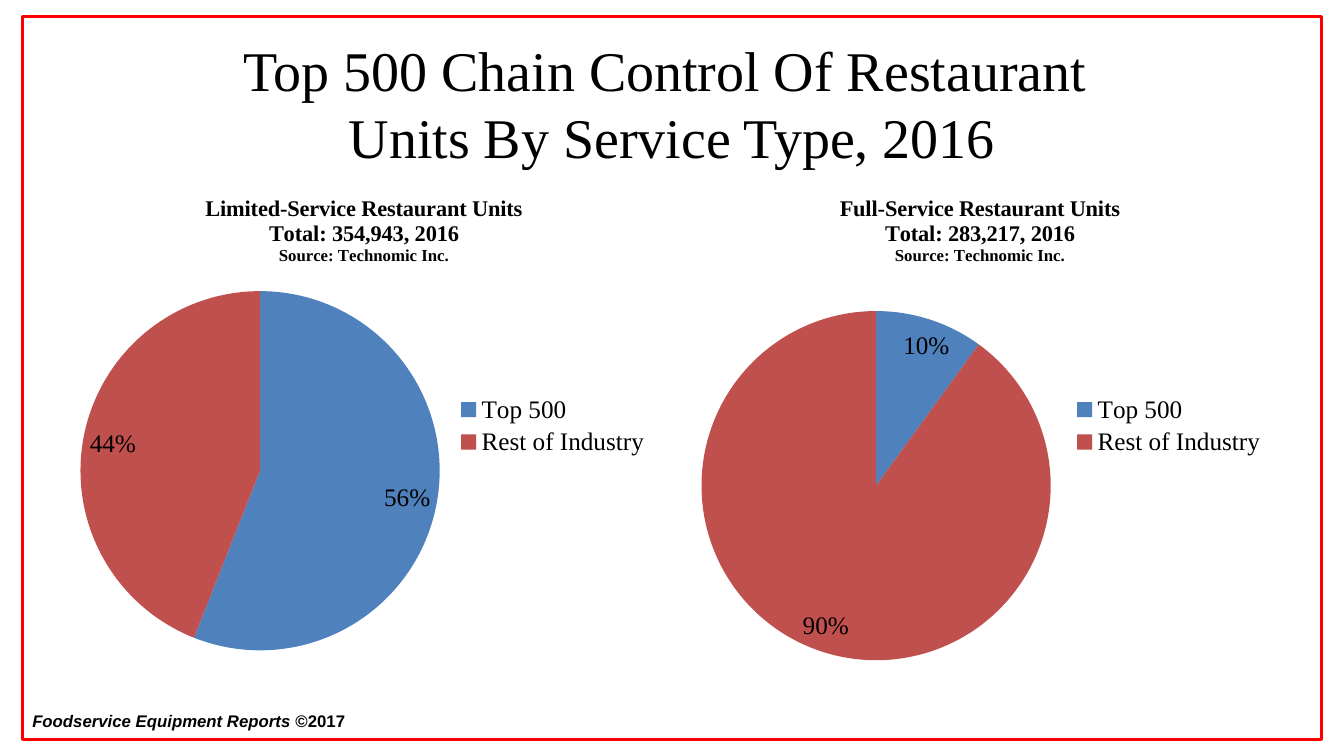
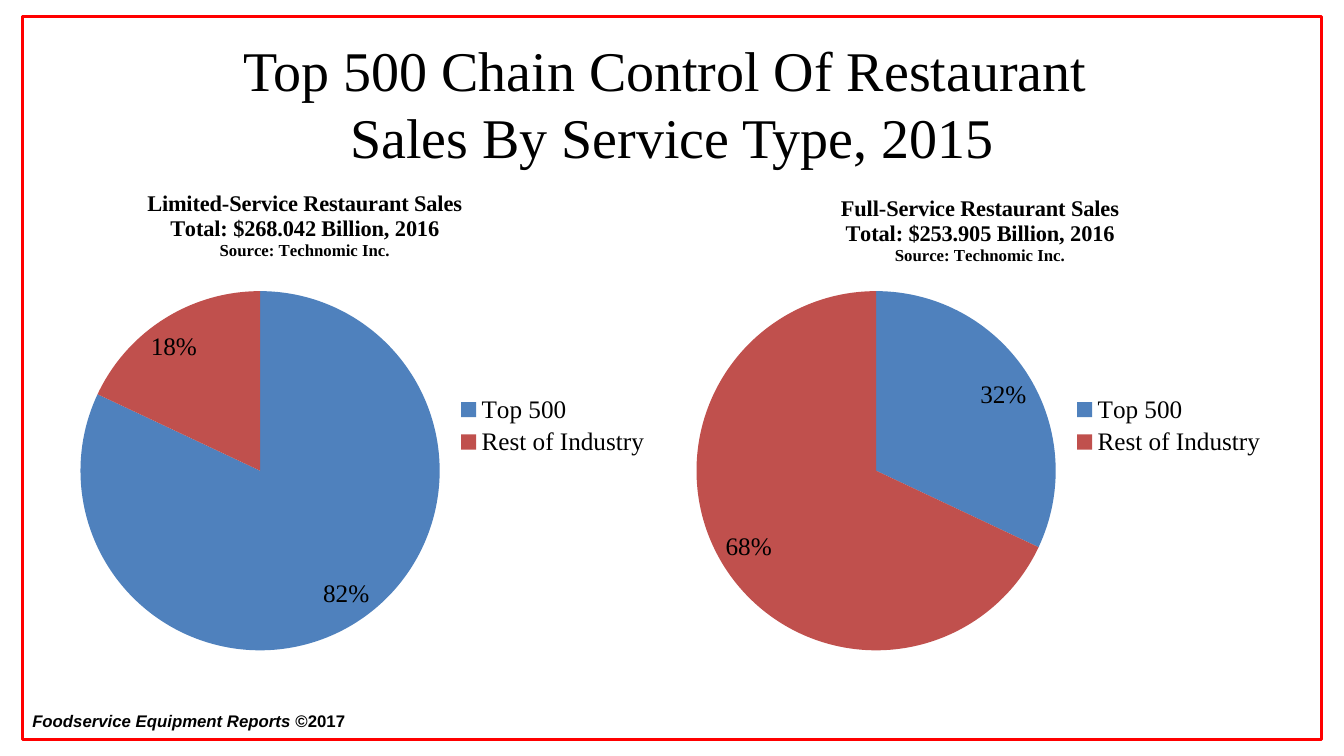
"""Two slides of paired pie charts on Top 500 chain control of restaurants."""
from lxml import etree
from pptx import Presentation
from pptx.chart.data import CategoryChartData
from pptx.dml.color import RGBColor
from pptx.enum import chart as ch, shapes, text
from pptx.oxml.ns import qn
from pptx.util import Pt

BLACK = RGBColor(0x00, 0x00, 0x00)
RED = RGBColor(0xFF, 0x00, 0x00)
SLICES = [RGBColor(0x4F, 0x81, 0xBD), RGBColor(0xC0, 0x50, 0x4D)]
SERIF, SANS = "Times New Roman", "Arial"

CATEGORIES = ["Top 500", "Rest of Industry"]
SOURCE = "Source: Technomic Inc."
FOOTER = [("Foodservice Equipment Reports ", True), ("©2017", False)]
WIDE_PIE = {"x": 0.02, "y": 0.23, "w": 0.61, "h": 0.72}
SMALL_PIE = {"x": 0.03, "y": 0.27, "w": 0.59, "h": 0.7}
SLIDES = [
    (["Top 500 Chain Control Of Restaurant ", "Units By Service Type, 2016"], [
        ("Limited-Service Restaurant Units", "Total: 354,943, 2016",
         (56, 44), WIDE_PIE, None),
        ("Full-Service Restaurant Units", "Total: 283,217, 2016",
         (10, 90), SMALL_PIE, None),
    ]),
    (["Top 500 Chain Control Of Restaurant ", "Sales By Service Type, 2015"], [
        ("Limited-Service Restaurant Sales", "Total: $268.042 Billion, 2016",
         (82, 18), WIDE_PIE, {"x": 0.13, "y": 0.02}),
        ("Full-Service Restaurant Sales", "Total: $253.905 Billion, 2016",
         (32, 68), WIDE_PIE, None),
    ]),
]

SLIDE_W, SLIDE_H = 960, 540
MARGIN, GAP = 48, 16
CHART_TOP, CHART_H = 126, 356.4
CHART_W = (SLIDE_W - 2 * MARGIN - GAP) / 2


def style(font, size, name=SERIF, bold=False, italic=False):
    font.name, font.size, font.bold, font.italic = name, Pt(size), bold, italic
    font.color.rgb = BLACK


def add_run(p, words, size, **options):
    r = p.add_run()
    r.text = words
    style(r.font, size, **options)


def add_shared_parts(s, layout):
    footer = s.shapes.add_textbox(Pt(16), Pt(504), Pt(512), Pt(21.6))
    tf = footer.text_frame
    tf.word_wrap = True
    for words, italic in FOOTER:
        add_run(tf.paragraphs[0], words, 12, name=SANS, bold=True, italic=italic)
    frame = s.shapes.add_shape(shapes.MSO_SHAPE.RECTANGLE,
                               Pt(16), Pt(12), Pt(928), Pt(516))
    frame.shadow.inherit = False
    frame.fill.background()
    frame.line.color.rgb = RED
    frame.line.width = Pt(2)
    for sp in (footer, frame):
        layout.shapes.element.append(sp.element)


def add_title(s, lines):
    sp = s.shapes.title
    sp.left, sp.top, sp.width, sp.height = Pt(MARGIN), Pt(21.6), Pt(864), Pt(90)
    tf = sp.text_frame
    tf.auto_size = text.MSO_AUTO_SIZE.NONE
    tf.vertical_anchor = text.MSO_ANCHOR.TOP
    tf.margin_top = Pt(3.5)
    p = tf.paragraphs[0]
    p.alignment = text.PP_ALIGN.CENTER
    p.line_spacing = Pt(48)
    for i, line in enumerate(lines):
        if i:
            p.add_line_break()
        add_run(p, line, 40)


def set_layout(parent, index, places, inner=False):
    for old in parent.findall(qn("c:layout")):
        parent.remove(old)
    layout = etree.Element(qn("c:layout"))
    manual = etree.SubElement(layout, qn("c:manualLayout"))
    values = [("layoutTarget", "inner")] if inner else []
    values += [("xMode", "edge"), ("yMode", "edge"), *places.items()]
    for tag, value in values:
        etree.SubElement(manual, qn("c:" + tag)).set("val", str(value))
    parent.insert(index, layout)


def add_pie(s, left, heading, total, values, pie_place, title_place):
    data = CategoryChartData()
    data.categories = CATEGORIES
    data.add_series("Series 1", values)
    chart = s.shapes.add_chart(ch.XL_CHART_TYPE.PIE, Pt(left), Pt(CHART_TOP),
                               Pt(CHART_W), Pt(CHART_H), data).chart
    style(chart.font, 18)

    chart.has_title = True
    tf = chart.chart_title.text_frame
    for i, (line, size) in enumerate([(heading, 16), (total, 16), (SOURCE, 12)]):
        p = tf.add_paragraph() if i else tf.paragraphs[0]
        add_run(p, line, size, bold=True)
    if title_place:
        set_layout(chart.chart_title.element, 1, title_place)
    set_layout(chart.element.find(".//" + qn("c:plotArea")), 0, pie_place, True)

    chart.has_legend = True
    chart.legend.position = ch.XL_LEGEND_POSITION.RIGHT
    chart.legend.include_in_layout = False
    style(chart.legend.font, 18)

    plot = chart.plots[0]
    plot.vary_by_categories = True
    for i, color in enumerate(SLICES):
        fill = plot.series[0].points[i].format.fill
        fill.solid()
        fill.fore_color.rgb = color
    plot.has_data_labels = True
    labels = plot.data_labels
    labels.show_percentage, labels.show_value = True, False
    labels.number_format, labels.number_format_is_linked = "0%", False
    labels.position = ch.XL_LABEL_POSITION.BEST_FIT
    style(labels.font, 18)


def main():
    prs = Presentation()
    prs.slide_width, prs.slide_height = Pt(SLIDE_W), Pt(SLIDE_H)
    layout = prs.slide_layouts.get_by_name("Title Only")
    for number, (title, pies) in enumerate(SLIDES):
        s = prs.slides.add_slide(layout)
        if number == 0:
            add_shared_parts(s, layout)
        add_title(s, title)
        for col, pie in enumerate(pies):
            add_pie(s, MARGIN + col * (CHART_W + GAP), *pie)
    prs.save("out.pptx")


if __name__ == "__main__":
    main()
